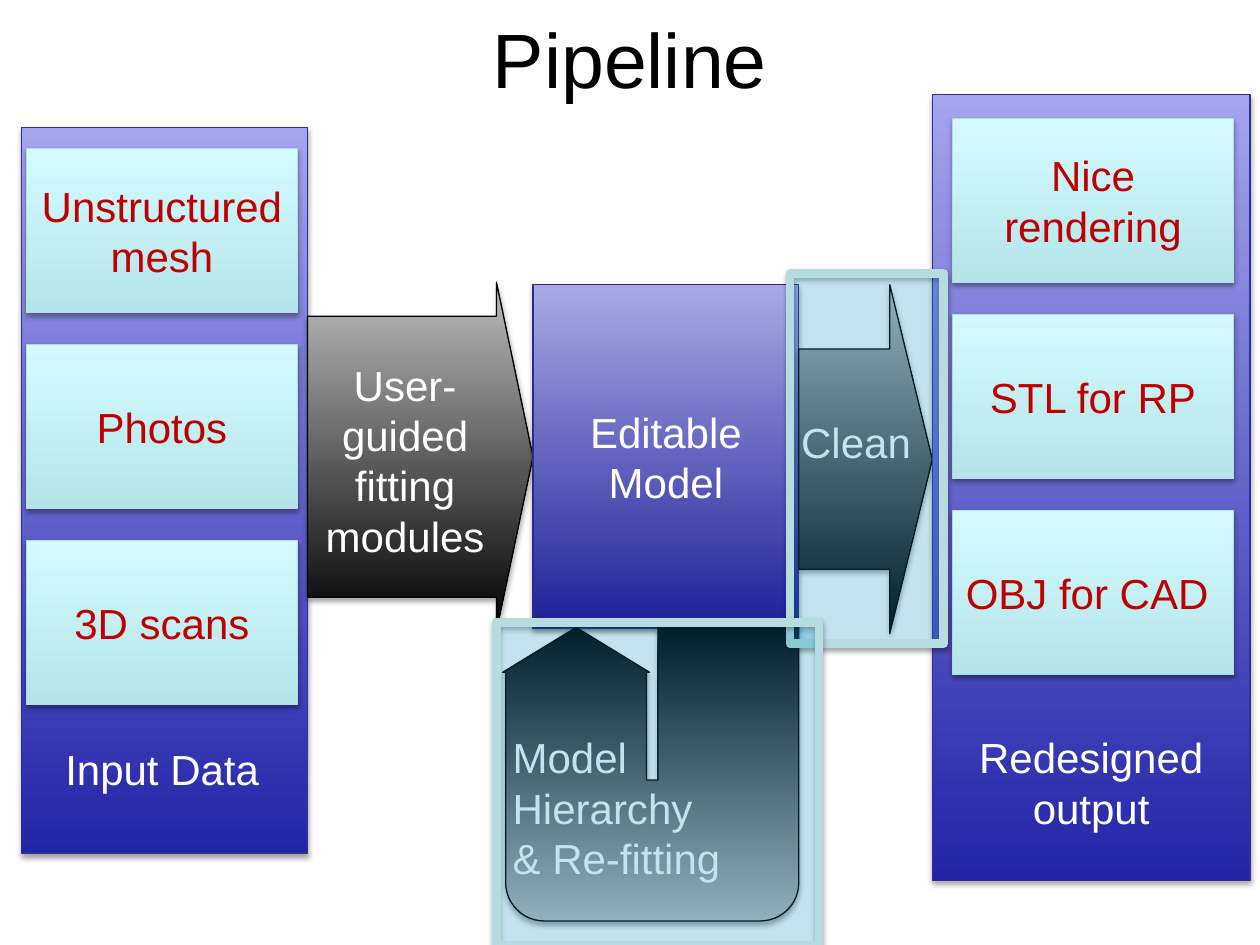
from lxml.etree import SubElement
from pptx import Presentation
from pptx.dml.color import RGBColor
from pptx.enum.shapes import MSO_SHAPE
from pptx.enum.text import MSO_ANCHOR, PP_ALIGN
from pptx.oxml.ns import qn
from pptx.util import Inches, Pt

COLORS = {
    "black": "000000", "white": "FFFFFF", "red": "C00000", "gray": "BDBDBD",
    "navy": "2424A8", "lavender": "A4A4EF", "navy_edge": "2F2F98",
    "indigo": "1F1F98", "lilac": "A9A9E5", "indigo_edge": "2A2A89",
    "aqua": "B5E5E9", "ice": "D3FBFF", "aqua_edge": "B6DCDF", "sky": "00B0F0",
}
PANEL = ("navy", "lavender", "navy_edge")
CARD = ("aqua", "ice", "aqua_edge")
MODEL = ("indigo", "lilac", "indigo_edge")
ARROW = ("black", "gray", "black")


def rgb(name):
    """Return the named colour."""
    return RGBColor.from_string(COLORS[name])


def write(tf, text, size=24, color="white", align=PP_ALIGN.CENTER, anchor=MSO_ANCHOR.MIDDLE):
    """Fill a text frame with one paragraph per line of text."""
    tf.word_wrap = True
    tf.vertical_anchor = anchor
    for i, line in enumerate(text.split("\n")):
        p = tf.add_paragraph() if i else tf.paragraphs[0]
        p.alignment = align
        r = p.add_run()
        r.text = line
        r.font.name = "Arial"
        r.font.size = Pt(size)
        r.font.color.rgb = rgb(color)


class Diagram:
    """Draws pipeline elements on a slide grid of 100 columns by 75 rows."""

    def __init__(self, prs):
        """Add a title-only slide and measure its grid."""
        self.s = prs.slides.add_slide(prs.slide_layouts[5])
        self.col, self.row = prs.slide_width / 100, prs.slide_height / 75

    def place(self, x, y, w, h):
        """Turn grid columns and rows into lengths."""
        return int(x * self.col), int(y * self.row), int(w * self.col), int(h * self.row)

    def title(self, text, *box):
        """Move and fill the title placeholder."""
        sp = self.s.shapes.title
        sp.left, sp.top, sp.width, sp.height = self.place(*box)
        write(sp.text_frame, text, size=44, color="black")

    def label(self, text, *box, align=PP_ALIGN.CENTER):
        """Add free text."""
        sp = self.s.shapes.add_textbox(*self.place(*box))
        write(sp.text_frame, text, align=align, anchor=MSO_ANCHOR.TOP)

    def shape(self, kind, box, edge, width=0.75, adj=()):
        """Add a preset shape with an outline and a soft shadow."""
        sp = self.s.shapes.add_shape(kind, *self.place(*box))
        for i, value in enumerate(adj):
            sp.adjustments[i] = value
        sp.line.color.rgb = rgb(edge)
        sp.line.width = Pt(width)
        sp.shadow.inherit = False
        effects = sp._element.spPr.find(qn("a:effectLst"))
        shadow = SubElement(effects, qn("a:outerShdw"), blurRad="40000", dist="23000",
                            dir="5400000", rotWithShape="0")
        color = SubElement(shadow, qn("a:srgbClr"), val=COLORS["black"])
        SubElement(color, qn("a:alpha"), val="35000")
        return sp

    def block(self, style, *box, kind=MSO_SHAPE.RECTANGLE, adj=(), text="", color="white"):
        """Add a shape shaded from dark at the bottom to light at the top."""
        dark, light, edge = style
        sp = self.shape(kind, box, edge, adj=adj)
        sp.fill.gradient()
        sp.fill.gradient_angle = 90
        for stop, name in zip(sp.fill.gradient_stops, (dark, light)):
            stop.color.rgb = rgb(name)
        if text:
            write(sp.text_frame, text, color=color)
        return sp

    def cards(self, texts, x, y, w):
        """Stack cards at equal steps down a panel."""
        for i, text in enumerate(texts):
            self.block(CARD, x, y + 15.56 * i, w, 13, text=text, color="red")

    def highlight(self, *box):
        """Add a translucent frame over a stage."""
        sp = self.shape(MSO_SHAPE.RECTANGLE, box, "aqua_edge", width=5)
        sp.fill.solid()
        sp.fill.fore_color.rgb = rgb("sky")
        color = sp._element.spPr.find(qn("a:solidFill")).find(qn("a:srgbClr"))
        SubElement(color, qn("a:alpha"), val="18000")


def main():
    """Build the pipeline slide."""
    prs = Presentation()
    prs.slide_width, prs.slide_height = Inches(10), Inches(7.5)
    d = Diagram(prs)
    d.title("Pipeline", 5, 0, 90, 9.2)

    d.block(PANEL, 1.7, 10.1, 22.7, 57.6)
    d.cards(["Unstructured mesh", "Photos", "3D scans"], 2.1, 11.8, 21.5)
    d.label("Input Data", 4.2, 58.5, 22.4, 5, align=PP_ALIGN.LEFT)

    d.block(ARROW, 24.4, 22.4, 17.9, 27.7, kind=MSO_SHAPE.RIGHT_ARROW, adj=(0.805, 0.162))
    d.block(MODEL, 42.3, 22.6, 21.1, 27.3, text="Editable Model")
    loop = d.block(ARROW, 39.9, 49.8, 23.5, 23.3, kind=MSO_SHAPE.U_TURN_ARROW,
                   adj=(0.48, 0.25, 0.153, 0.131, 1))
    for flip in ("flipH", "flipV"):
        loop._element.spPr.xfrm.set(flip, "1")
    d.label("Model\nHierarchy\n& Re-fitting", 39.7, 57.6, 21.9, 13.1, align=PP_ALIGN.LEFT)
    d.block(ARROW, 63.4, 22.6, 10.6, 27.7, kind=MSO_SHAPE.RIGHT_ARROW, adj=(0.631, 0.319))

    d.block(PANEL, 74, 7.5, 25.2, 62.4)
    d.label("Clean", 62.6, 32.6, 13.8, 5, align=PP_ALIGN.LEFT)
    d.label("User-guided fitting modules", 23.6, 28, 17.1, 21.2)
    d.cards(["Nice rendering", "STL for RP", "OBJ for CAD "], 75.6, 9.4, 22.3)
    d.label("Redesigned output", 74, 57.6, 25.2, 9.1)

    d.highlight(62.7, 21.7, 12.2, 29.4)
    d.highlight(39.4, 49.4, 25.6, 25.6)
    prs.save("out.pptx")


if __name__ == "__main__":
    main()
